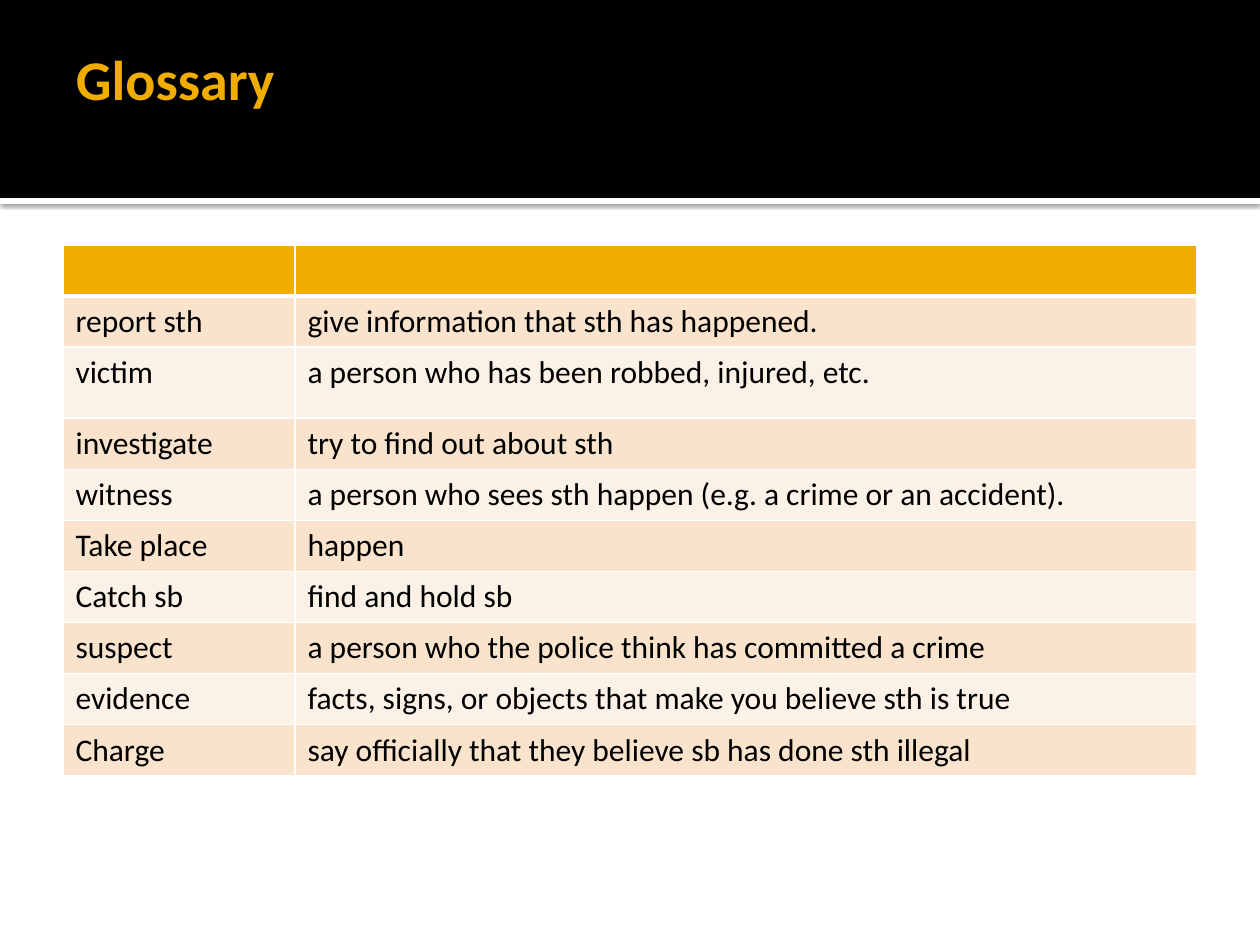
from lxml.etree import SubElement
from pptx import Presentation
from pptx.dml.color import RGBColor
from pptx.enum.shapes import MSO_SHAPE
from pptx.enum.text import MSO_ANCHOR, MSO_AUTO_SIZE, PP_ALIGN
from pptx.oxml import parse_xml
from pptx.oxml.ns import nsdecls, qn
from pptx.util import Emu, Pt

TITLE = "Glossary"
GLOSSARY = [
    ("", ""),
    ("report sth", "give information that sth has happened."),
    ("victim", "a person who has been robbed, injured, etc."),
    ("investigate", "try to find out about sth"),
    ("witness", "a person who sees sth happen (e.g. a crime or an accident)."),
    ("Take place", "happen"),
    ("Catch sb", "find and hold sb"),
    ("suspect", "a person who the police think has committed a crime"),
    ("evidence", "facts, signs, or objects that make you believe sth is true"),
    ("Charge", "say officially that they believe sb has done sth illegal"),
]
COLUMN_WIDTHS = (232, 902)
ROW_HEIGHT = 51
TALL_ROWS = {"victim": 71}

FONT = "Calibri"
BLACK, WHITE, GOLD = "000000", "FFFFFF", "F0AD00"
STRIPES = ("FCF1E7", "F9E3CC")


def px(length):
    return Emu(round(length * 914400 / 126))


def rgb(color):
    return RGBColor.from_string(color)


def set_font(paragraph, size, color, bold=False):
    font = paragraph.font
    font.name, font.size, font.bold = FONT, Pt(size), bold
    font.color.rgb = rgb(color)


def add_band(slide, top, height, color):
    band = slide.shapes.add_shape(MSO_SHAPE.RECTANGLE, 0, px(top), px(1260), px(height))
    band.fill.solid()
    band.fill.fore_color.rgb = rgb(color)
    band.line.fill.background()
    band.shadow.inherit = False
    return band


def add_lower_shadow(band):
    effects = band.element.spPr.find(qn("a:effectLst"))
    effects.append(parse_xml(
        f'<a:outerShdw {nsdecls("a")} blurRad="31750" dist="10160" dir="5400000" rotWithShape="0">'
        f'<a:srgbClr val="{BLACK}"><a:alpha val="60000"/></a:srgbClr></a:outerShdw>'))


def add_borders(cell, bottom_width):
    properties = cell._tc.get_or_add_tcPr()
    for side, width in (("L", 1), ("R", 1), ("T", 1), ("B", bottom_width)):
        line = SubElement(properties, qn(f"a:ln{side}"), w=str(Pt(width)))
        SubElement(SubElement(line, qn("a:solidFill")), qn("a:srgbClr"), val=WHITE)


def add_title(slide):
    title = slide.shapes.title
    title.element.getparent().append(title.element)  # in front of the bands
    title.left, title.top, title.width, title.height = px(63), px(21), px(1134), px(173)
    frame = title.text_frame
    frame.text = TITLE
    frame.auto_size = MSO_AUTO_SIZE.NONE
    frame.vertical_anchor = MSO_ANCHOR.MIDDLE
    frame.margin_left, frame.margin_right = px(13), px(6)
    frame.margin_top, frame.margin_bottom = px(6), px(65)
    heading = frame.paragraphs[0]
    heading.alignment = PP_ALIGN.LEFT
    set_font(heading, 32, GOLD, bold=True)


def add_glossary(slide):
    heights = [TALL_ROWS.get(term, ROW_HEIGHT) for term, _ in GLOSSARY]
    table = slide.shapes.add_table(
        len(GLOSSARY), len(COLUMN_WIDTHS), px(63), px(245),
        px(sum(COLUMN_WIDTHS)), px(sum(heights))).table
    for column, width in zip(table.columns, COLUMN_WIDTHS):
        column.width = px(width)
    for index, (entry, height) in enumerate(zip(GLOSSARY, heights)):
        table.rows[index].height = px(height)
        is_header = index == 0
        for cell, wording in zip(table.rows[index].cells, entry):
            add_borders(cell, 3 if is_header else 1)
            cell.fill.solid()
            cell.fill.fore_color.rgb = rgb(GOLD if is_header else STRIPES[index % 2])
            cell.text = wording
            set_font(cell.text_frame.paragraphs[0], 18, BLACK)


def main():
    presentation = Presentation()
    presentation.slide_width, presentation.slide_height = px(1260), px(945)
    slide = presentation.slides.add_slide(presentation.slide_layouts[5])
    add_lower_shadow(add_band(slide, 198, 6, WHITE))
    add_band(slide, 0, 198, BLACK)
    add_title(slide)
    add_glossary(slide)
    presentation.save("out.pptx")


if __name__ == "__main__":
    main()
